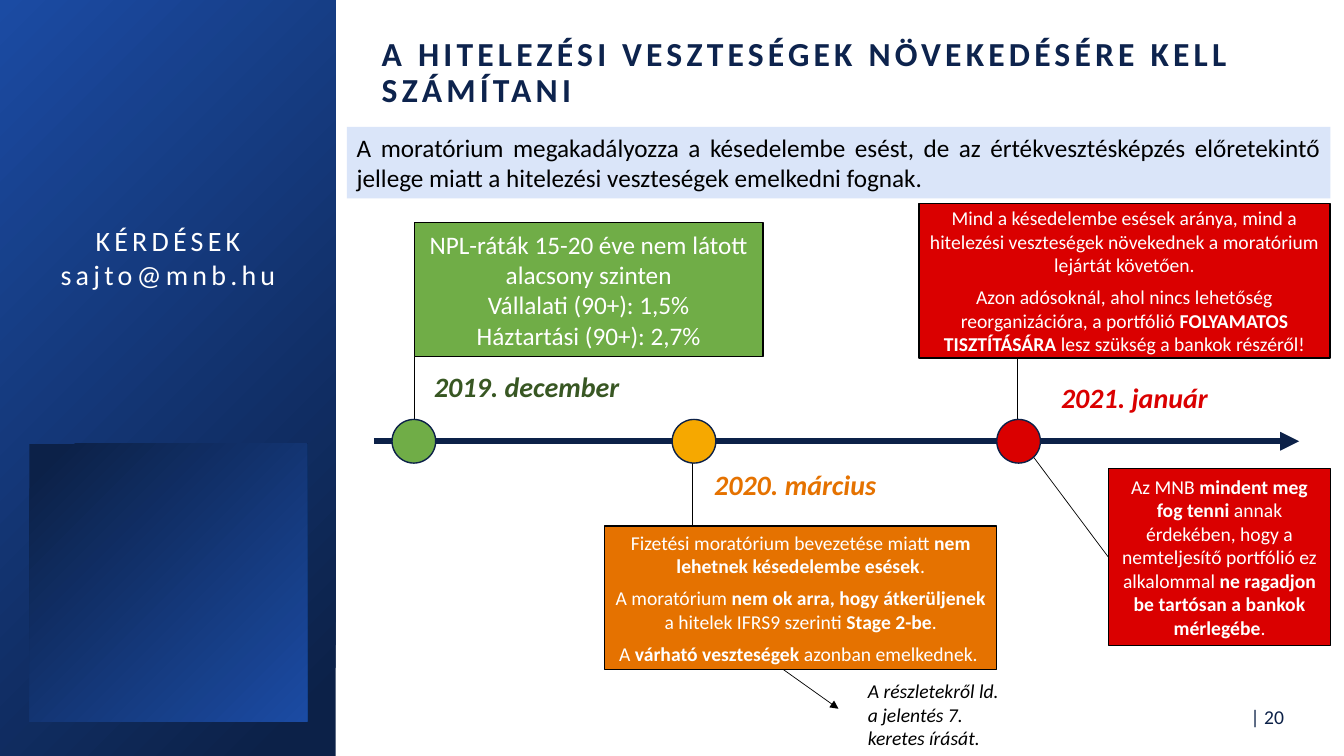
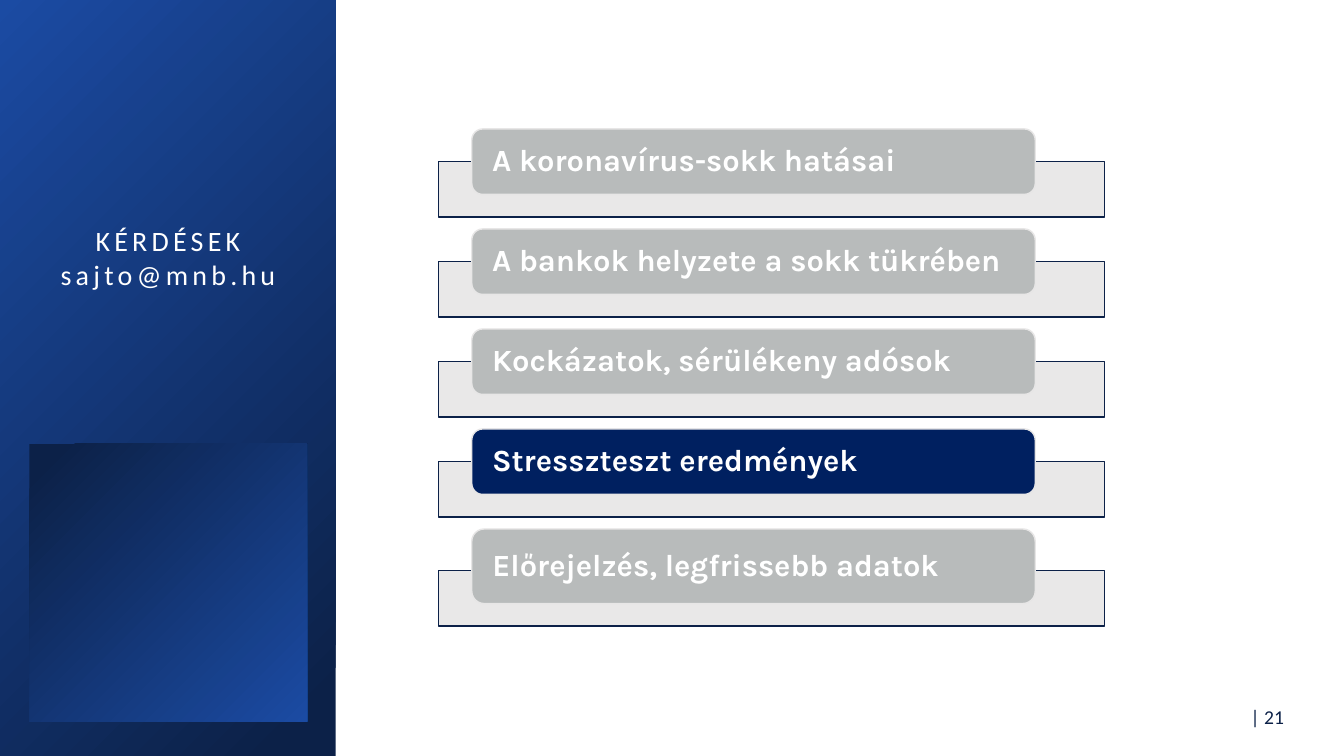
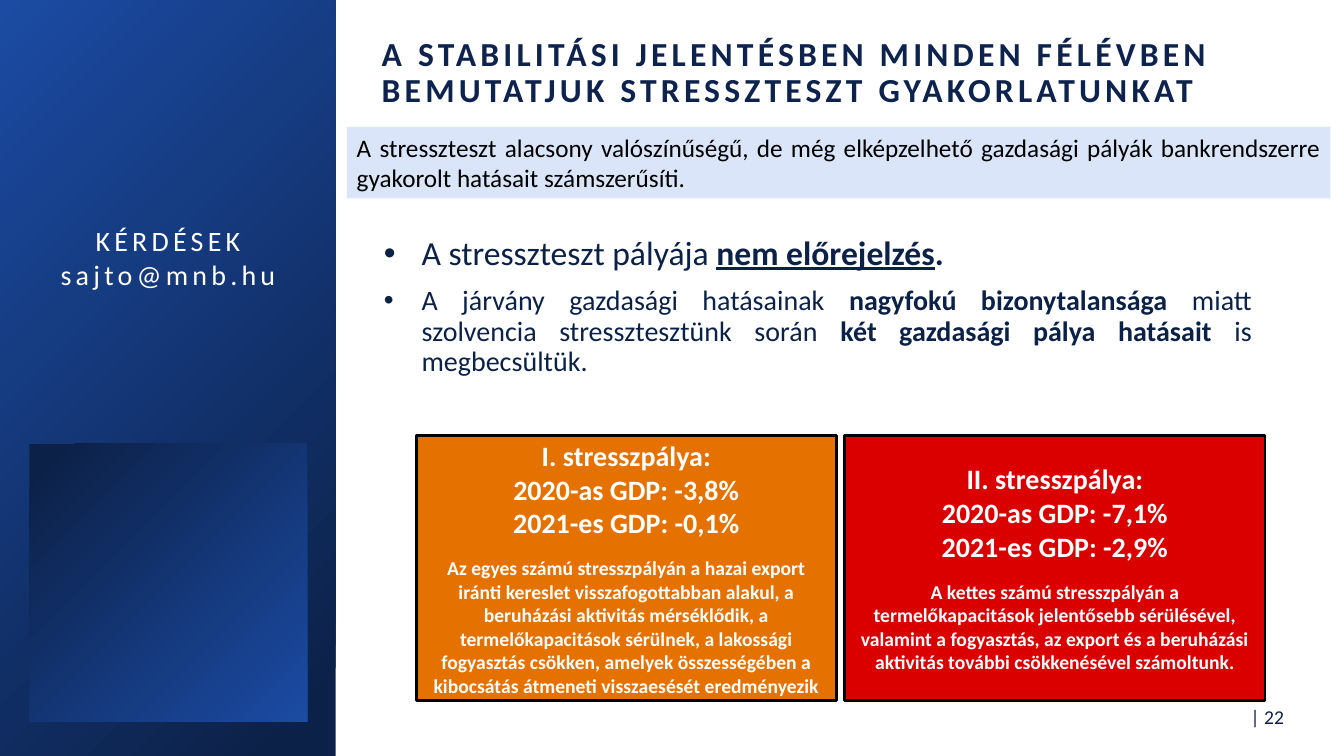
from lxml import etree
from pptx import Presentation
from pptx.dml.color import RGBColor
from pptx.enum.shapes import MSO_CONNECTOR, MSO_SHAPE
from pptx.enum.text import MSO_ANCHOR, MSO_AUTO_SIZE, PP_ALIGN
from pptx.oxml.ns import qn
from pptx.util import Cm, Pt

RECT, OVAL, ROUNDED = MSO_SHAPE.RECTANGLE, MSO_SHAPE.OVAL, MSO_SHAPE.ROUNDED_RECTANGLE
STRAIGHT = MSO_CONNECTOR.STRAIGHT
LEFT, CENTER, RIGHT, JUSTIFY = PP_ALIGN.LEFT, PP_ALIGN.CENTER, PP_ALIGN.RIGHT, PP_ALIGN.JUSTIFY
TOP, MIDDLE = MSO_ANCHOR.TOP, MSO_ANCHOR.MIDDLE

# Shared colours
NAVY, BLUE, TITLE, PALE = "0C2148", "1B4BA3", "0D234D", "DAE5F9"
GREEN, DARK_GREEN, AMBER, ORANGE, RED = "70AD47", "385723", "F6A800", "E57200", "DA0000"
ACTIVE, MUTED, LIGHT = "002060", "B8BBBB", "E7E6E6"
WHITE, BLACK = "FFFFFF", "000000"

# Shared text formats
CONTACT = {"size": Pt(20), "color": WHITE, "alignment": CENTER, "spacing": 300}
TITLE_TEXT = {"size": Pt(24), "color": TITLE, "bold": True, "spacing": 300,
              "alignment": LEFT, "line_spacing": 0.9}
PAGE = {"size": Pt(14), "color": NAVY, "alignment": RIGHT}
LEAD = {"size": Pt(18), "color": BLACK, "alignment": JUSTIFY}
CALLOUT = {"size": Pt(14), "color": WHITE, "alignment": CENTER, "space_after": Pt(6)}
DATE = {"size": Pt(20), "bold": True, "italic": True}
NOTE = {"size": Pt(14), "color": BLACK, "italic": True}
AGENDA = {"size": Pt(22), "name": "Karla", "color": WHITE, "bold": True,
          "alignment": LEFT, "line_spacing": 0.9}
BULLET = {"color": NAVY, "alignment": JUSTIFY, "line_spacing": 0.9, "bullet": True}
SCENARIO = {"size": Pt(20), "color": WHITE, "bold": True, "alignment": CENTER}
PARAGRAPH_KEYS = ("alignment", "line_spacing", "space_before", "space_after")
FONT_KEYS = ("size", "name", "bold", "italic")


def rgb(value):
    return RGBColor.from_string(value)


def place(sp, at):
    sp.left, sp.top, sp.width, sp.height = (Cm(v) for v in at)


def add_bullet(p):
    pPr = p._p.get_or_add_pPr()
    pPr.set("marL", str(Cm(0.95)))
    pPr.set("indent", str(-Cm(0.95)))
    etree.SubElement(pPr, qn("a:buChar")).set("char", "•")


def write(sp, paragraphs, fmt, anchor=TOP):
    """Fill a shape; *stars* enclose bold text, (text, dict) overrides the format."""
    tf = sp.text_frame
    tf.word_wrap, tf.auto_size, tf.vertical_anchor = True, MSO_AUTO_SIZE.NONE, anchor
    for i, item in enumerate(paragraphs):
        text, extra = (item, {}) if isinstance(item, str) else item
        style = {"name": "Calibri", "bold": False, **fmt, **extra}
        p = tf.add_paragraph() if i else tf.paragraphs[0]
        if style.get("bullet"):
            add_bullet(p)
        for key in PARAGRAPH_KEYS:
            if key in style:
                setattr(p, key, style[key])
        if i == 0:
            p.space_before = Pt(0)
        for n, part in enumerate(text.split("*")):
            if part:
                add_run(p, part, {**style, "bold": style["bold"] or n % 2 == 1})


def add_run(p, text, style):
    r = p.add_run()
    r.text = text
    for key in FONT_KEYS:
        if key in style:
            setattr(r.font, key, style[key])
    r.font.color.rgb = rgb(style["color"])
    if "spacing" in style:
        r._r.get_or_add_rPr().set("spc", str(style["spacing"]))


def add_box(s, at, fill, line=None, width=1, kind=RECT):
    sp = s.shapes.add_shape(kind, *(Cm(v) for v in at))
    sp.shadow.inherit = False
    sp.fill.solid()
    sp.fill.fore_color.rgb = rgb(fill)
    if line:
        sp.line.color.rgb = rgb(line)
        sp.line.width = Pt(width)
    else:
        sp.line.fill.background()
    return sp


def add_text(s, at, paragraphs, fmt, anchor=TOP):
    sp = s.shapes.add_textbox(*(Cm(v) for v in at))
    write(sp, paragraphs, fmt, anchor)
    return sp


def add_line(s, start, end, color=BLACK, width=0.5, arrow=False):
    c = s.shapes.add_connector(STRAIGHT, *(Cm(v) for v in start + end))
    c.line.color.rgb = rgb(color)
    c.line.width = Pt(width)
    if arrow:
        etree.SubElement(c.line._get_or_add_ln(), qn("a:tailEnd")).set("type", "triangle")
    etree.SubElement(c.element.spPr, qn("a:effectLst"))


def add_gradient(s, at, rotation=0):
    sp = add_box(s, at, NAVY)
    sp.fill.gradient()
    sp.fill.gradient_angle = 135
    for stop, color, position in zip(sp.fill.gradient_stops, (NAVY, BLUE), (0.06, 1)):
        stop.color.rgb = rgb(color)
        stop.position = position
    sp.rotation = rotation
    return sp


def add_sidebar(prs, s):
    """Draw the side panel and move it to the slide master."""
    parts = [add_gradient(s, (0, 0, 8.46, 19.05)),
             add_gradient(s, (0.74, 11.18, 7, 7), 180),
             add_text(s, (1.02, 5.51, 6.43, 1.96), ["KÉRDÉSEK", "sajto@mnb.hu"], CONTACT)]
    for number, sp in enumerate(parts, 101):
        sp.element.nvSpPr.cNvPr.set("id", str(number))
        prs.slide_master.shapes.element.append(sp.element)


def add_slide(prs, layout, number, title=None, lead=None):
    s = prs.slides.add_slide(prs.slide_layouts.get_by_name(layout))
    add_text(s, (30.86, 17.53, 1.75, 1.04), [f"| {number}"], PAGE, MIDDLE)
    if title:
        place(s.shapes.title, (9.42, 0.86, 23.32, 1.98))
        write(s.shapes.title, [title], TITLE_TEXT, MIDDLE)
        tf = s.shapes.title.text_frame
        tf.margin_left = tf.margin_right = Cm(0.2)
        tf.margin_top = tf.margin_bottom = Cm(0.1)
        write(add_box(s, (8.74, 3.2, 24.79, 1.8), PALE), [lead], LEAD)
    return s


def add_callout(s, at, fill, paragraphs, fmt=CALLOUT, width=1):
    write(add_box(s, at, fill, BLACK, width), paragraphs, fmt, MIDDLE)


def build_timeline(s):
    # Axis and leader lines
    axis_y, radius = 11.12, 0.55
    add_line(s, (9.42, axis_y), (32.74, axis_y), NAVY, 4.5, arrow=True)
    for x, edge, side in ((10.44, 8.99, -1), (17.45, 13.26, 1), (25.65, 9.02, -1)):
        add_line(s, (x, axis_y + side * radius), (x, edge))
    add_line(s, (27.94, 14.05), (26.04, 11.51))
    add_line(s, (19.74, 16.87), (21.13, 17.86), arrow=True)

    # Milestones and dates
    for x, color in ((10.43, GREEN), (17.49, AMBER), (25.67, RED)):
        add_box(s, (x - radius, axis_y - radius, 2 * radius, 2 * radius), color, NAVY, kind=OVAL)
    for x, y, date, color in ((10.69, 9.19, "2019. december", DARK_GREEN),
                              (17.75, 11.66, "2020. március", ORANGE),
                              (26.49, 9.47, "2021. január", RED)):
        add_text(s, (x, y, 6.22, 1.12), [date], {**DATE, "color": color})

    # Callouts
    add_callout(s, (10.44, 5.61, 8.79, 3.38), GREEN, [
        "NPL-ráták 15-20 éve nem látott alacsony szinten",
        "Vállalati (90+): 1,5%",
        "Háztartási (90+): 2,7%"], {**CALLOUT, "size": Pt(18), "space_after": Pt(0)})
    add_callout(s, (15.24, 13.26, 9.88, 3.61), ORANGE, [
        "Fizetési moratórium bevezetése miatt *nem lehetnek késedelembe esések*.",
        "A moratórium *nem ok arra, hogy átkerüljenek *a hitelek IFRS9 szerinti *Stage 2-be*.",
        ("A *várható veszteségek *azonban emelkednek. ", {"space_after": Pt(0)})])
    add_callout(s, (23.16, 5.13, 10.36, 3.89), RED, [
        "Mind a késedelembe esések aránya, mind a hitelezési veszteségek növekednek "
        "a moratórium lejártát követően.",
        "Azon adósoknál, ahol nincs lehetőség reorganizációra, a portfólió "
        "*FOLYAMATOS TISZTÍTÁSÁRA* lesz szükség a bankok részéről!"])
    add_callout(s, (27.94, 11.81, 5.59, 4.45), RED, [
        "Az MNB *mindent meg fog tenni* annak érdekében, hogy a nemteljesítő portfólió "
        "ez alkalommal *ne ragadjon be tartósan a bankok mérlegébe*."])
    add_text(s, (21.62, 16.99, 4.04, 2.06),
             ["A részletekről ld. a jelentés 7. keretes írását."], NOTE)


def build_agenda(s):
    topics = ["A koronavírus-sokk hatásai", "A bankok helyzete a sokk tükrében",
              "Kockázatok, sérülékeny adósok", "Stresszteszt eredmények",
              "Előrejelzés, legfrissebb adatok"]
    for i, topic in enumerate(topics):
        top = 3.25 + i * 2.52
        height = 1.88 if i == len(topics) - 1 else 1.65
        base = add_box(s, (11.05, top + height - 0.83, 16.79, 1.4), LIGHT, NAVY)
        color = base.element.spPr.find(qn("a:solidFill"))[0]
        etree.SubElement(color, qn("a:alpha")).set("val", "90000")
        fill = ACTIVE if topic.startswith("Stresszteszt") else MUTED
        pill = add_box(s, (11.89, top, 14.2, height), fill, LIGHT, kind=ROUNDED)
        write(pill, [topic], AGENDA, MIDDLE)
        tf = pill.text_frame
        tf.margin_left = tf.margin_right = Cm(0.43)
        tf.margin_top = tf.margin_bottom = 0


def build_scenarios(s):
    # Bullet list
    body = s.placeholders[1]
    place(body, (9.42, 5.36, 22.38, 4.75))
    write(body, [
        ("A stresszteszt pályája *nem előrejelzés**.*", {"size": Pt(24)}),
        ("A járvány gazdasági hatásainak *nagyfokú bizonytalansága* miatt szolvencia "
         "stressztesztünk során *két gazdasági pálya hatásait *is megbecsültük.",
         {"size": Pt(20), "space_before": Pt(10)})], BULLET, MIDDLE)
    body.text_frame.paragraphs[0].runs[1].font.underline = True

    # Stress paths
    paths = [
        (ORANGE, "I.", "-3,8%", "-0,1%",
         "Az egyes számú stresszpályán a hazai export iránti kereslet visszafogottabban "
         "alakul, a beruházási aktivitás mérséklődik, a termelőkapacitások sérülnek, "
         "a lakossági fogyasztás csökken, amelyek összességében a kibocsátás átmeneti "
         "visszaesését eredményezik"),
        (RED, "II.", "-7,1%", "-2,9%",
         "A kettes számú stresszpályán a termelőkapacitások jelentősebb sérülésével, "
         "valamint a fogyasztás, az export és a beruházási aktivitás további "
         "csökkenésével számoltunk.")]
    gap = {"space_after": Pt(12)}
    for i, (color, number, gdp_2020, gdp_2021, detail) in enumerate(paths):
        add_callout(s, (10.49 + i * 10.8, 10.97, 10.59, 6.68), color, [
            f"{number} stresszpálya:",
            f"2020-as GDP: {gdp_2020}",
            (f"2021-es GDP: {gdp_2021}", gap),
            (detail, {"size": Pt(14), **gap})], SCENARIO, 2)


def main():
    prs = Presentation()
    prs.slide_width, prs.slide_height = Cm(33.87), Cm(19.05)

    s = add_slide(prs, "Title Only", 20,
                  "A HITELEZÉSI VESZTESÉGEK NÖVEKEDÉSÉRE KELL SZÁMÍTANI",
                  "A moratórium megakadályozza a késedelembe esést, de az értékvesztésképzés "
                  "előretekintő jellege miatt a hitelezési veszteségek emelkedni fognak.")
    add_sidebar(prs, s)
    build_timeline(s)

    build_agenda(add_slide(prs, "Blank", 21))

    s = add_slide(prs, "Title and Content", 22,
                  "A STABILITÁSI JELENTÉSBEN MINDEN FÉLÉVBEN BEMUTATJUK "
                  "STRESSZTESZT GYAKORLATUNKAT",
                  "A stresszteszt alacsony valószínűségű, de még elképzelhető gazdasági "
                  "pályák bankrendszerre gyakorolt hatásait számszerűsíti.")
    build_scenarios(s)

    prs.save("out.pptx")


if __name__ == "__main__":
    main()
